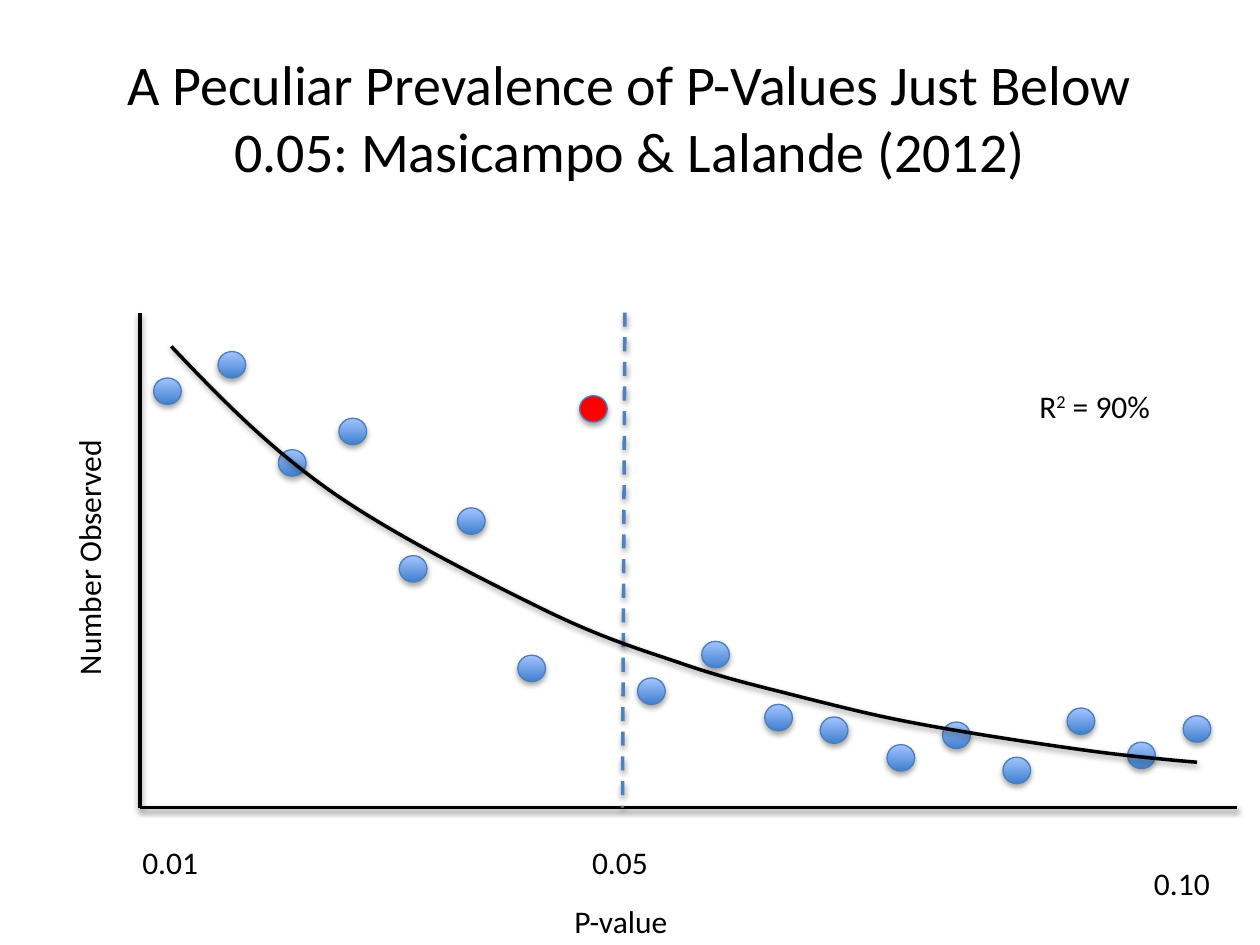
import lxml.etree
import pptx
import pptx.dml.color
import pptx.enum.dml
import pptx.enum.shapes
import pptx.enum.text
import pptx.oxml
import pptx.oxml.ns
import pptx.util

Pt = pptx.util.Pt
qn = pptx.oxml.ns.qn
COLORS = {
    "black": "000000",
    "red": "FF0000",
    "dot_bottom": "3F80CE",
    "dot_top": "A4C4FF",
    "dot_line": "4B7EBC",
    "cutoff": "4F81BD",
}


def rgb(name):
    return pptx.dml.color.RGBColor.from_string(COLORS[name])


def add_shadow(shape, distance, opacity):
    properties = shape._element.spPr
    for old in properties.findall(qn("a:effectLst")):
        properties.remove(old)
    properties.append(pptx.oxml.parse_xml(
        f'<a:effectLst {pptx.oxml.ns.nsdecls("a")}>'
        f'<a:outerShdw blurRad="{Pt(3.15)}" dist="{Pt(distance)}" dir="5400000" rotWithShape="0">'
        f'<a:srgbClr val="{COLORS["black"]}"><a:alpha val="{opacity * 1000}"/></a:srgbClr>'
        '</a:outerShdw></a:effectLst>'
    ))


deck = pptx.Presentation()
deck.slide_width, deck.slide_height = Pt(720), Pt(540)
page = deck.slides.add_slide(deck.slide_layouts[5])

title = page.shapes.title
title.left, title.top, title.width, title.height = Pt(36), Pt(21.6), Pt(648), Pt(90)
title.text_frame.text = "A Peculiar Prevalence of P-Values Just Below 0.05: Masicampo & Lalande (2012)"
title.text_frame.vertical_anchor = pptx.enum.text.MSO_ANCHOR.MIDDLE
heading = title.text_frame.paragraphs[0]
heading.alignment = pptx.enum.text.PP_ALIGN.CENTER
heading.runs[0].font.name = "Calibri"
heading.runs[0].font.size = Pt(32)
heading.runs[0].font.color.rgb = rgb("black")

peak = (331.2, 226.1)
dots = [
    (87.8, 216), (124.6, 200.9), (159.1, 257), (193.7, 239), (228.2, 317.5), (261.4, 290.2),
    (295.9, 374.4), peak, (364.3, 387.4), (401, 366.5), (437, 402.5), (468.7, 409.7),
    (506.9, 425.5), (538.6, 412.6), (573.1, 432.7), (609.8, 404.6), (644.4, 424.1), (676.1, 409),
]
for left, top in dots:
    dot = page.shapes.add_shape(
        pptx.enum.shapes.MSO_SHAPE.OVAL, Pt(left), Pt(top), Pt(15.8), Pt(15.1))
    if (left, top) == peak:
        dot.fill.solid()
        dot.fill.fore_color.rgb = rgb("red")
    else:
        dot.fill.gradient()
        dot.fill.gradient_angle = 90
        for stop, name in zip(dot.fill.gradient_stops, ("dot_bottom", "dot_top")):
            stop.color.rgb = rgb(name)
    dot.line.color.rgb = rgb("dot_line")
    dot.line.width = Pt(0.75)
    add_shadow(dot, 1.8, 35)

axis_left, axis_top, axis_bottom = 79.9, 178.6, 461.5
lines = [
    (axis_left, axis_top, axis_left, axis_bottom, "black"),
    (axis_left, axis_bottom, 707, axis_bottom, "black"),
    (357.1, axis_top, 355.7, axis_bottom, "cutoff"),
]
for start_x, start_y, end_x, end_y, color in lines:
    line = page.shapes.add_connector(
        pptx.enum.shapes.MSO_CONNECTOR.STRAIGHT, Pt(start_x), Pt(start_y), Pt(end_x), Pt(end_y))
    line.line.color.rgb = rgb(color)
    line.line.width = Pt(2)
    if color == "cutoff":
        line.line.dash_style = pptx.enum.dml.MSO_LINE.DASH
    add_shadow(line, 1.6, 38)

curve_start = (97.9, 198)
curve_pieces = [
    [(124.6, 226.1), (151.9, 254.2), (187.2, 279.4)],
    [(222.5, 304.6), (277.2, 331.9), (311, 348.5)],
    [(344.9, 365), (365, 370.8), (390.2, 379.4)],
    [(415.4, 388.1), (437.8, 393.1), (460.1, 398.9)],
    [(483.1, 404.6), (499.7, 409), (527, 414)],
    [(553.7, 419), (596.2, 425.5), (622.8, 429.1)],
    [(648.7, 432.7), (684, 435.6), (684, 435.6)],
]
builder = page.shapes.build_freeform(Pt(curve_start[0]), Pt(curve_start[1]))
builder.add_line_segments([(Pt(x), Pt(y)) for *_, (x, y) in curve_pieces], close=False)
curve = builder.convert_to_shape()
segments = list(curve._element.iter(qn("a:lnTo")))
for segment, piece in zip(segments, curve_pieces):
    bezier = lxml.etree.Element(qn("a:cubicBezTo"))
    for x, y in piece:
        lxml.etree.SubElement(
            bezier, qn("a:pt"),
            x=str(Pt(x) - Pt(curve_start[0])), y=str(Pt(y) - Pt(curve_start[1])))
    segment.getparent().replace(segment, bezier)
curve.fill.background()
curve.line.color.rgb = rgb("black")
curve.line.width = Pt(2)
add_shadow(curve, 1.6, 38)

labels = [
    (74.2, 478.1, 46.8, 0, ["0.01"]),
    (652.3, 490.3, 46.8, 0, ["0.10"]),
    (331.2, 478.1, 46.8, 0, ["0.05"]),
    (-24.5, 303.1, 150.5, 270, ["Number Observed"]),
    (321.1, 511.9, 69.1, 0, ["P-value"]),
    (586.8, 217.4, 82.1, 0, ["R", "2", " = 90%"]),
]
for left, top, width, rotation, texts in labels:
    box = page.shapes.add_textbox(Pt(left), Pt(top), Pt(width), Pt(29))
    box.rotation = rotation
    box.text_frame.word_wrap = False
    box.text_frame.auto_size = pptx.enum.text.MSO_AUTO_SIZE.SHAPE_TO_FIT_TEXT
    para = box.text_frame.paragraphs[0]
    for text in texts:
        span = para.add_run()
        span.text = text
        span.font.name = "Calibri"
        span.font.size = Pt(18)
        span.font.color.rgb = rgb("black")
        if text == "2":
            span._r.get_or_add_rPr().set("baseline", "30000")

deck.save("out.pptx")
